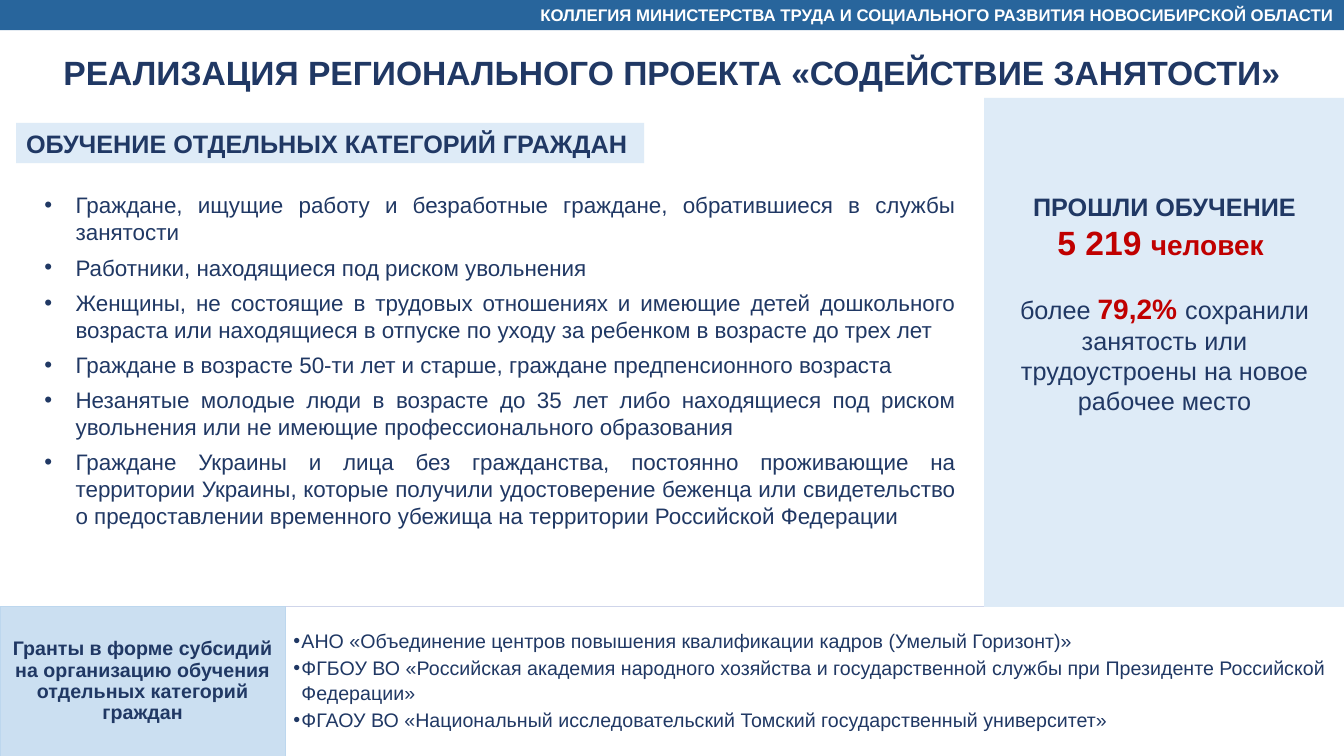
"""Build the slide on retraining within the regional employment project."""
from lxml.etree import SubElement
from pptx import Presentation
from pptx.dml.color import RGBColor
from pptx.enum.shapes import MSO_SHAPE
from pptx.enum.text import MSO_ANCHOR, MSO_AUTO_SIZE, PP_ALIGN
from pptx.oxml.ns import qn
from pptx.util import Inches, Pt

COLORS = {"navy": "203864", "red": "C00000", "white": "FFFFFF", "header": "28659C",
          "pale": "DEEBF7", "grant": "BDD7EE", "border": "CFD5EA"}
FONT = "Arial"
W, H = 13.33, 7.5
GRANT_TOP, GRANT_SPLIT = 6.02, 2.83
PANEL_LEFT, PANEL_TOP = 9.76, 0.97

HEADER = "КОЛЛЕГИЯ МИНИСТЕРСТВА ТРУДА И СОЦИАЛЬНОГО РАЗВИТИЯ НОВОСИБИРСКОЙ ОБЛАСТИ"
TITLE = "РЕАЛИЗАЦИЯ РЕГИОНАЛЬНОГО ПРОЕКТА «СОДЕЙСТВИЕ ЗАНЯТОСТИ»"
SUBTITLE = "ОБУЧЕНИЕ ОТДЕЛЬНЫХ КАТЕГОРИЙ ГРАЖДАН"
CATEGORIES = [
    "Граждане, ищущие работу и безработные граждане, обратившиеся в службы занятости",
    "Работники, находящиеся под риском увольнения",
    "Женщины, не состоящие в трудовых отношениях и имеющие детей дошкольного возраста "
    "или находящиеся в отпуске по уходу за ребенком в возрасте до трех лет",
    "Граждане в возрасте 50-ти лет и старше, граждане предпенсионного возраста",
    "Незанятые молодые люди в возрасте до 35 лет либо находящиеся под риском увольнения "
    "или не имеющие профессионального образования",
    "Граждане Украины и лица без гражданства, постоянно проживающие на территории Украины, "
    "которые получили удостоверение беженца или свидетельство о предоставлении временного "
    "убежища на территории Российской Федерации",
]
GRANT_LABEL = ("Гранты в форме субсидий на организацию обучения отдельных категорий "
               "граждан")
GRANTEES = [
    "АНО «Объединение центров повышения квалификации кадров (Умелый Горизонт)»",
    "ФГБОУ ВО «Российская академия народного хозяйства и государственной службы "
    "при Президенте Российской Федерации»",
    "ФГАОУ ВО «Национальный исследовательский Томский государственный университет»",
]
RESULTS = [
    [("ПРОШЛИ ОБУЧЕНИЕ", 18, "navy", True)],
    [("5 219 ", 24, "red", True), ("человек ", 20, "red", True)],
    [("более ", 18, "navy", False), ("79,2% ", 20, "red", True),
     ("сохранили занятость или трудоустроены на новое рабочее место", 18, "navy", False)],
]


def color(name):
    return RGBColor.from_string(COLORS[name])


def place(sp, left, top, width, height):
    sp.left, sp.top, sp.width, sp.height = map(Inches, (left, top, width, height))


def add_rect(slide, box, fill, line=None):
    sp = slide.shapes.add_shape(MSO_SHAPE.RECTANGLE, *map(Inches, box))
    sp.shadow.inherit = False
    sp.fill.solid()
    sp.fill.fore_color.rgb = color(fill)
    set_line(sp, line)
    return sp


def set_line(sp, name):
    if name:
        sp.line.color.rgb = color(name)
        sp.line.width = Pt(0.5)
    else:
        sp.line.fill.background()


def write(sp, paras, align, anchor=MSO_ANCHOR.TOP, wrap=True, insets=(0.1, 0.05, 0.1, 0.05),
          spacing=1.0, after=0, bullet=None):
    tf = sp.text_frame
    tf.auto_size, tf.word_wrap, tf.vertical_anchor = MSO_AUTO_SIZE.NONE, wrap, anchor
    tf.margin_left, tf.margin_top, tf.margin_right, tf.margin_bottom = map(Inches, insets)
    for i, runs in enumerate(paras):
        p = tf.paragraphs[0] if i == 0 else tf.add_paragraph()
        p.alignment, p.line_spacing = align, spacing
        p.space_before, p.space_after = Pt(0), Pt(after)
        if bullet:
            pPr = p._p.get_or_add_pPr()
            pPr.set("marL", str(Inches(bullet)))
            pPr.set("indent", str(-Inches(bullet)))
            SubElement(pPr, qn("a:buFont")).set("typeface", FONT)
            SubElement(pPr, qn("a:buChar")).set("char", "•")
        for text, size, name, bold in runs:
            r = p.add_run()
            r.text = text
            r.font.name, r.font.size, r.font.bold = FONT, Pt(size), bold
            r.font.color.rgb = color(name)
    return tf


def main():
    prs = Presentation()
    prs.slide_width, prs.slide_height = Inches(W), Inches(H)
    slide = prs.slides.add_slide(prs.slide_layouts[3])
    title, categories, grantees = slide.placeholders

    header = add_rect(slide, (0, 0, W, 0.3), "header")
    write(header, [[(HEADER, 12, "white", True)]], PP_ALIGN.RIGHT, MSO_ANCHOR.MIDDLE)

    place(title, 0, 0.46, W, 0.5)
    write(title, [[(TITLE, 24, "navy", True)]], PP_ALIGN.CENTER)

    subtitle = add_rect(slide, (0.16, 1.22, 6.23, 0.4), "pale")
    write(subtitle, [[(SUBTITLE, 18, "navy", True)]], PP_ALIGN.LEFT, wrap=False)

    place(categories, 0.34, 1.85, 9.24, 3.75)
    write(categories, [[(text, 16, "navy", False)] for text in CATEGORIES],
          PP_ALIGN.JUSTIFY, after=6, bullet=0.31)

    grant_height = H - GRANT_TOP
    label = add_rect(slide, (0, GRANT_TOP, GRANT_SPLIT, grant_height), "grant", "grant")
    fill_color = label._element.spPr.find(qn("a:solidFill"))[0]
    SubElement(fill_color, qn("a:alpha")).set("val", "78000")
    write(label, [[(GRANT_LABEL, 14, "navy", True)]], PP_ALIGN.CENTER, MSO_ANCHOR.MIDDLE,
          insets=(0.1, 0.06, 0.1, 0.06), spacing=0.9)

    place(grantees, GRANT_SPLIT, GRANT_TOP, W - GRANT_SPLIT, grant_height)
    set_line(grantees, "border")
    write(grantees, [[(text, 14, "navy", False)] for text in GRANTEES], PP_ALIGN.LEFT,
          MSO_ANCHOR.MIDDLE, insets=(0.08, 0.08, 0.1, 0.12), spacing=1.07, after=1, bullet=0.08)

    add_rect(slide, (PANEL_LEFT, PANEL_TOP, W - PANEL_LEFT, GRANT_TOP - PANEL_TOP), "pale")
    results = slide.shapes.add_textbox(*map(Inches, (9.96, 1.85, 3.18, 2.36)))
    tf = write(results, RESULTS, PP_ALIGN.CENTER)
    tf.paragraphs[-1].space_before = Pt(21)

    prs.save("out.pptx")


if __name__ == "__main__":
    main()
